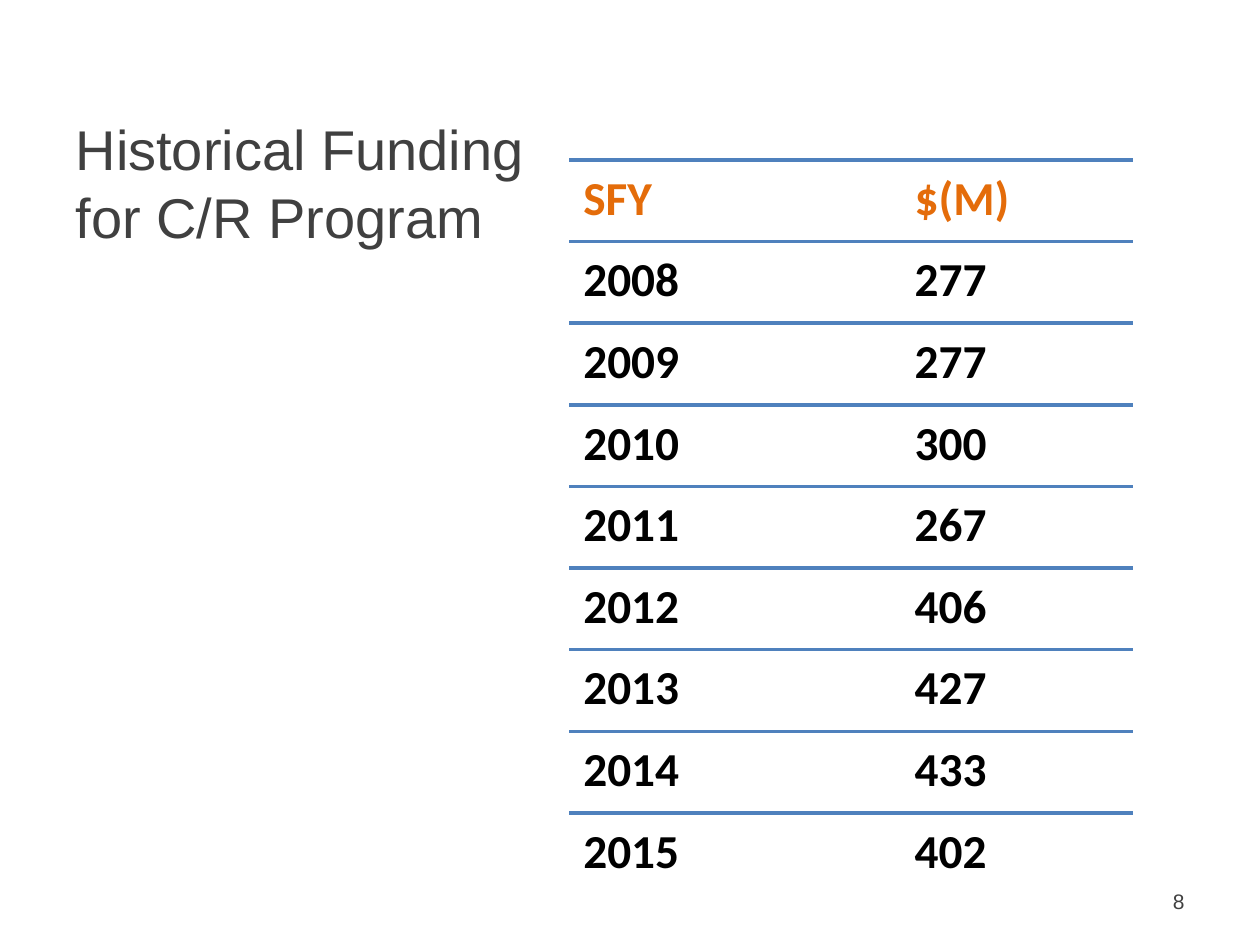
import pptx
import pptx.util
import pptx.dml.color
import pptx.enum.shapes
import pptx.enum.text
import pptx.oxml.ns
import lxml.etree
from pptx.util import Inches

ROWS = [("SFY", "$(M)"), ("2008", "277"), ("2009", "277"),
        ("2010", "300"), ("2011", "267"), ("2012", "406"),
        ("2013", "427"), ("2014", "433"), ("2015", "402")]
GREY, ORANGE, BLACK, BLUE = "404040", "E46C0A", "000000", "4F81BD"
MIDDLE = pptx.enum.text.MSO_ANCHOR.MIDDLE


def color(text):
    return pptx.dml.color.RGBColor.from_string(text)


def style(para, size, name, tint, bold=False):
    for run in para.runs:
        run.font.size = pptx.util.Pt(size)
        run.font.name = name
        run.font.bold = bold
        run.font.color.rgb = color(tint)


def add_title(slide, left, top, width, height):
    title = slide.shapes.title
    title.left, title.top = left, top
    title.width, title.height = width, height
    frame = title.text_frame
    frame.text = "Historical Funding\vfor C/R Program"
    frame.vertical_anchor = MIDDLE
    para = frame.paragraphs[0]
    para.alignment = pptx.enum.text.PP_ALIGN.LEFT
    style(para, 32, "Arial", GREY)


def add_rule(slide, left, top, width):
    rule = slide.shapes.add_connector(
        pptx.enum.shapes.MSO_CONNECTOR.STRAIGHT, left, top, left + width, top)
    rule.line.color.rgb = color(BLUE)
    rule.line.width = pptx.util.Pt(2)
    lxml.etree.SubElement(rule._element.spPr,
                          pptx.oxml.ns.qn("a:effectLst"))


def add_funds(slide, left, top, width, height):
    """Table of funding by year, with a rule above each row."""
    table = slide.shapes.add_table(
        len(ROWS), 2, left, top, width, height).table
    table.first_row = table.horz_banding = False
    table.columns[0].width = Inches(2.63)
    table.columns[1].width = width - Inches(2.63)
    for r, row in enumerate(ROWS):
        add_rule(slide, left, top + height * r // len(ROWS), width)
        for c, text in enumerate(row):
            cell = table.cell(r, c)
            cell.text = text
            cell.margin_left = cell.margin_right = Inches(0.11)
            cell.margin_top = cell.margin_bottom = Inches(0.11)
            cell.fill.background()
            para = cell.text_frame.paragraphs[0]
            para.line_spacing = 0.9
            style(para, 27, "Calibri", BLACK if r else ORANGE, True)


def add_number(slide, left, top, width, height):
    frame = slide.shapes.add_textbox(left, top, width, height).text_frame
    frame.word_wrap = True
    frame.vertical_anchor = MIDDLE
    frame.text = "8"
    para = frame.paragraphs[0]
    para.alignment = pptx.enum.text.PP_ALIGN.RIGHT
    style(para, 12, "Arial", GREY)


def main():
    deck = pptx.Presentation()
    deck.slide_width, deck.slide_height = Inches(10), Inches(7.5)
    slide = deck.slides.add_slide(deck.slide_layouts[5])
    add_title(slide, Inches(0.5), Inches(0.82), Inches(9), Inches(1.25))
    add_funds(slide, Inches(4.52), Inches(1.27), Inches(4.47), Inches(5.83))
    add_number(slide, Inches(7.17), Inches(6.95), Inches(2.33), Inches(0.4))
    deck.save("out.pptx")


if __name__ == "__main__":
    main()
